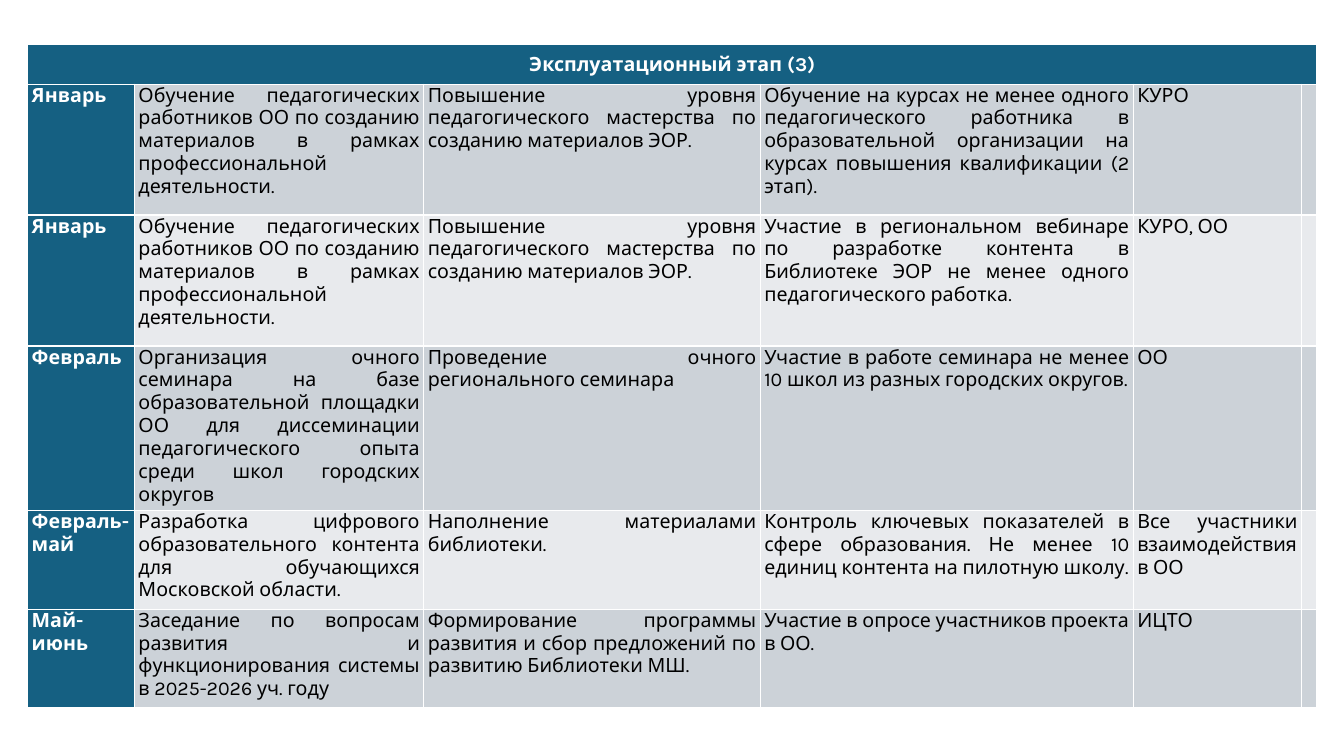
import pptx
import pptx.util
import pptx.dml.color
import pptx.enum.text

Cm = pptx.util.Cm
RGBColor = pptx.dml.color.RGBColor
PP_ALIGN = pptx.enum.text.PP_ALIGN
MSO_ANCHOR = pptx.enum.text.MSO_ANCHOR

TEAL = RGBColor(0x15, 0x60, 0x82)
BAND_DARK = RGBColor(0xCC, 0xD2, 0xD8)
BAND_LIGHT = RGBColor(0xE8, 0xEA, 0xED)
WHITE = RGBColor(0xFF, 0xFF, 0xFF)
BLACK = RGBColor(0x00, 0x00, 0x00)

COLUMN_WIDTHS = [2.69, 7.29, 8.48, 9.4, 4.24, 0.38]
ROW_HEIGHTS = [0.99, 3.3, 3.3, 4.14, 2.49, 2.49]
CELL_FORMAT = {
    "margin_left": Cm(0.1),
    "margin_right": Cm(0.1),
    "margin_top": Cm(0),
    "margin_bottom": Cm(0),
}
FONT_FORMAT = {"name": "Karla", "size": pptx.util.Pt(14)}

TRAINING = "Обучение педагогических работников ОО по созданию материалов в рамках профессиональной деятельности."
MASTERY = "Повышение уровня педагогического мастерства по созданию материалов ЭОР."
STAGE_PLAN = [
    ["Эксплуатационный этап (3)", "", "", "", "", ""],
    [
        "Январь",
        TRAINING,
        MASTERY,
        "Обучение на курсах не менее одного педагогического работника в образовательной организации на курсах повышения квалификации (2 этап).",
        "КУРО",
        "",
    ],
    [
        "Январь",
        TRAINING,
        MASTERY,
        "Участие в региональном вебинаре по разработке контента в Библиотеке ЭОР не менее одного педагогического работка.",
        "КУРО, ОО",
        "",
    ],
    [
        "Февраль",
        "Организация очного семинара на базе образовательной площадки ОО для диссеминации педагогического опыта среди школ городских округов",
        "Проведение очного регионального семинара",
        "Участие в работе семинара не менее 10 школ из разных городских округов.",
        "ОО",
        "",
    ],
    [
        "Февраль-май",
        "Разработка цифрового образовательного контента для обучающихся Московской области.",
        "Наполнение материалами библиотеки.",
        "Контроль ключевых показателей в сфере образования. Не менее 10 единиц контента на пилотную школу.",
        "Все участники взаимодействия в ОО",
        "",
    ],
    [
        "Май-июнь",
        "Заседание по вопросам развития и функционирования системы в 2025-2026 уч. году",
        "Формирование программы развития и сбор предложений по развитию Библиотеки МШ.",
        "Участие в опросе участников проекта в ОО.",
        "ИЦТО",
        "",
    ],
]

presentation = pptx.Presentation()
presentation.slide_width = Cm(33.87)
presentation.slide_height = Cm(19.05)
slide = presentation.slides.add_slide(presentation.slide_layouts[6])

schedule = slide.shapes.add_table(
    len(ROW_HEIGHTS), len(COLUMN_WIDTHS),
    Cm(0.7), Cm(1.13), Cm(sum(COLUMN_WIDTHS)), Cm(sum(ROW_HEIGHTS)),
).table
schedule.first_col = True
for column, width in zip(schedule.columns, COLUMN_WIDTHS):
    column.width = Cm(width)
for row, height in zip(schedule.rows, ROW_HEIGHTS):
    row.height = Cm(height)

for row_index, entries in enumerate(STAGE_PLAN):
    band = BAND_DARK if row_index % 2 else BAND_LIGHT
    for column_index, entry in enumerate(entries):
        heading = row_index == 0 or column_index == 0
        cell = schedule.cell(row_index, column_index)
        for attribute, value in CELL_FORMAT.items():
            setattr(cell, attribute, value)
        cell.vertical_anchor = MSO_ANCHOR.TOP if row_index else MSO_ANCHOR.MIDDLE
        cell.fill.solid()
        cell.fill.fore_color.rgb = TEAL if heading else band
        if not entry:
            continue
        paragraph = cell.text_frame.paragraphs[0]
        paragraph.alignment = PP_ALIGN.JUSTIFY if row_index else PP_ALIGN.CENTER
        run = paragraph.add_run()
        run.text = entry
        for attribute, value in FONT_FORMAT.items():
            setattr(run.font, attribute, value)
        run.font.bold = heading
        run.font.color.rgb = WHITE if heading else BLACK

schedule.cell(0, 0).merge(schedule.cell(0, len(COLUMN_WIDTHS) - 1))

presentation.save("out.pptx")
